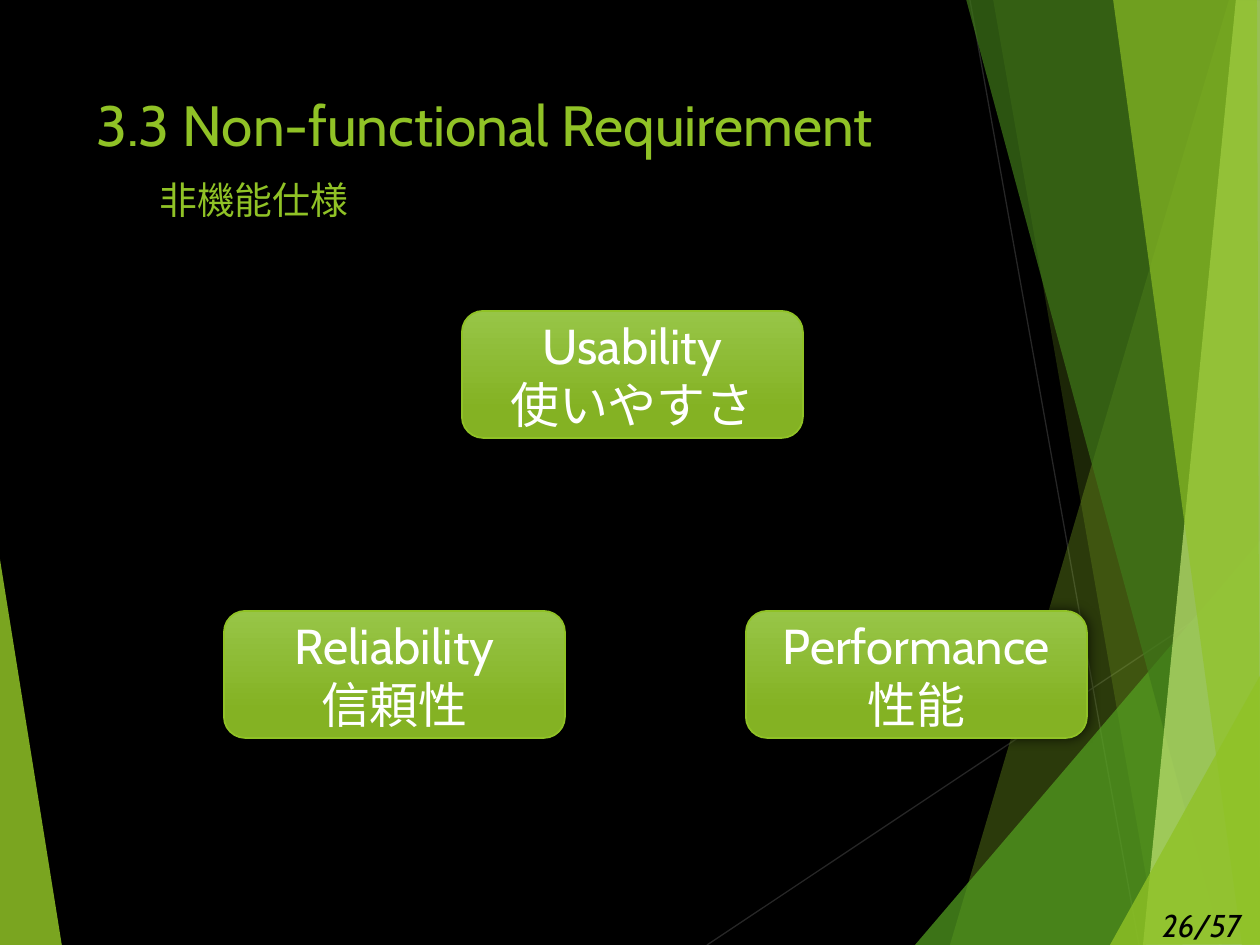
import lxml.etree
import pptx
import pptx.dml.color
import pptx.enum.shapes
import pptx.enum.text
import pptx.oxml.ns
import pptx.util

RGBColor = pptx.dml.color.RGBColor
qn = pptx.oxml.ns.qn

PX = 914400 / 126
W, H = 1260, 945
FONT = "Cabin"

BLACK = RGBColor(0x00, 0x00, 0x00)
WHITE = RGBColor(0xFF, 0xFF, 0xFF)
GRAY = RGBColor(0x26, 0x26, 0x26)
GREEN = RGBColor(0x90, 0xC2, 0x26)
MID_GREEN = RGBColor(0x54, 0xA0, 0x21)
DARK_GREEN = RGBColor(0x3F, 0x78, 0x19)
PALE_GREEN = RGBColor(0xC0, 0xE4, 0x74)
BOX_TOP = RGBColor(0x97, 0xC5, 0x47)
BOX_BOTTOM = RGBColor(0x84, 0xB2, 0x23)

# Decorative facets, back to front: points, colour, opacity in percent
FACETS = [
    ([(-1, 553), (62, 946), (-1, 945)], GREEN, 85),
    ([(1229, 0), (950, 945), (1262, 946), (1261, 1)], GREEN, 30),
    ([(993, -1), (1158, 945), (1261, 945), (1261, -1)], GREEN, 20),
    ([(915, 945), (1260, 541), (1261, 945)], MID_GREEN, 72),
    ([(966, -1), (1222, 945), (1261, 944), (1261, -1)], DARK_GREEN, 70),
    ([(1236, -1), (1143, 945), (1261, 945), (1260, -1)], PALE_GREEN, 70),
    ([(1113, -1), (1242, 945), (1260, 945), (1257, -1)], GREEN, 65),
    ([(1110, 945), (1261, 674), (1261, 944)], GREEN, 80),
]
RAYS = [(707, 945, 1261, 576), (970, 0, 1139, 945)]

BOX_W, BOX_H = 341, 127
BOXES = [
    (462, 311, "Usability\v使いやすさ"),
    (224, 611, "Reliability\v信頼性"),
    (746, 611, "Performance\v性能"),
]


def px(*values):
    return [pptx.util.Emu(round(v * PX)) for v in values]


def style_run(r, size, color, italic=None):
    r.font.name = FONT
    r.font.size = pptx.util.Pt(size)
    r.font.color.rgb = color
    r.font.italic = italic


def set_alpha(color_element, percent):
    alpha = lxml.etree.SubElement(color_element, qn("a:alpha"))
    alpha.set("val", str(percent * 1000))


def add_ray(slide, ends):
    line = slide.shapes.add_connector(
        pptx.enum.shapes.MSO_CONNECTOR.STRAIGHT, *px(*ends))
    line.line.color.rgb = GRAY
    line.line.width = pptx.util.Pt(0.75)
    lxml.etree.SubElement(line._element.spPr, qn("a:effectLst"))


def add_facet(slide, points, color, opacity):
    builder = slide.shapes.build_freeform(*points[0], scale=PX)
    builder.add_line_segments(points[1:], close=True)
    sp = builder.convert_to_shape()
    sp.shadow.inherit = False
    sp.line.fill.background()
    sp.fill.solid()
    sp.fill.fore_color.rgb = color
    set_alpha(sp._element.spPr.find(".//" + qn("a:srgbClr")), opacity)


def add_title(slide, heading, subtitle):
    tf = slide.shapes.add_textbox(*px(84, 84, 875, 181)).text_frame
    tf.word_wrap = True
    p = tf.paragraphs[0]
    # The subtitle is indented by a tab stop
    tabs = lxml.etree.SubElement(p._p.get_or_add_pPr(), qn("a:tabLst"))
    lxml.etree.SubElement(tabs, qn("a:tab"), pos=str(px(63)[0]), algn="l")
    p.text = heading + "\v\t"
    for r in p.runs:
        style_run(r, 32.4, GREEN)
    r = p.add_run()
    r.text = subtitle
    style_run(r, 21.6, GREEN)


def add_shadow(sp):
    sp.shadow.inherit = False
    effects = sp._element.spPr.find(qn("a:effectLst"))
    shadow = lxml.etree.SubElement(
        effects, qn("a:outerShdw"), blurRad=str(pptx.util.Pt(7)), dist="0")
    color = lxml.etree.SubElement(shadow, qn("a:srgbClr"), val=str(BLACK))
    set_alpha(color, 70)


def add_box(slide, x, y, text):
    sp = slide.shapes.add_shape(
        pptx.enum.shapes.MSO_SHAPE.ROUNDED_RECTANGLE, *px(x, y, BOX_W, BOX_H))
    sp.fill.gradient()
    sp.fill.gradient_angle = 270
    stops = zip(sp.fill.gradient_stops, (0, 0.78), (BOX_TOP, BOX_BOTTOM))
    for stop, position, color in stops:
        stop.position = position
        stop.color.rgb = color
    sp.line.color.rgb = GREEN
    sp.line.width = pptx.util.Pt(1)
    add_shadow(sp)
    tf = sp.text_frame
    tf.vertical_anchor = pptx.enum.text.MSO_ANCHOR.MIDDLE
    p = tf.paragraphs[0]
    p.text = text
    p.alignment = pptx.enum.text.PP_ALIGN.CENTER
    for r in p.runs:
        style_run(r, 28, WHITE)


def add_page_number(slide, text):
    tf = slide.shapes.add_textbox(*px(1150, 900, 110, 50)).text_frame
    tf.word_wrap = False
    tf.text = text
    style_run(tf.paragraphs[0].runs[0], 18, BLACK, italic=True)


def main():
    prs = pptx.Presentation()
    prs.slide_width, prs.slide_height = px(W, H)
    slide = prs.slides.add_slide(prs.slide_layouts[6])
    slide.background.fill.solid()
    slide.background.fill.fore_color.rgb = BLACK

    # Background decoration
    for ends in RAYS:
        add_ray(slide, ends)
    for facet in FACETS:
        add_facet(slide, *facet)

    # Content
    add_title(slide, "3.3 Non-functional Requirement", "非機能仕様")
    for box in BOXES:
        add_box(slide, *box)
    add_page_number(slide, "26/57")

    prs.save("out.pptx")


if __name__ == "__main__":
    main()
